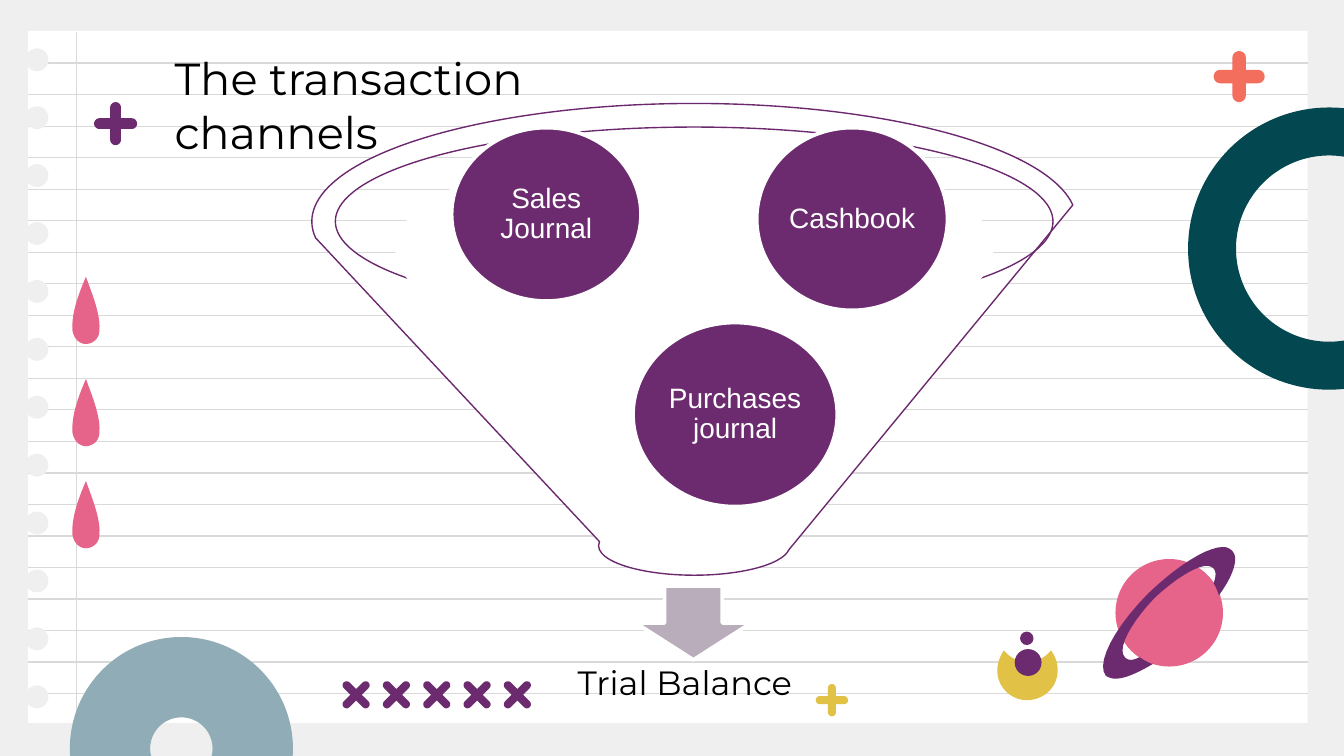
from dataclasses import dataclass
from math import cos, pi, sin

from lxml import etree
from pptx import Presentation
from pptx.dml.color import RGBColor
from pptx.enum.shapes import MSO_CONNECTOR, MSO_SHAPE
from pptx.enum.text import MSO_ANCHOR, PP_ALIGN
from pptx.oxml.ns import qn
from pptx.util import Inches, Pt

RECT, OVAL, DONUT = MSO_SHAPE.RECTANGLE, MSO_SHAPE.OVAL, MSO_SHAPE.DONUT
FUNNEL, DOWN_ARROW = MSO_SHAPE.FUNNEL, MSO_SHAPE.DOWN_ARROW
STRAIGHT = MSO_CONNECTOR.STRAIGHT
TOP, MIDDLE = MSO_ANCHOR.TOP, MSO_ANCHOR.MIDDLE
LEFT, CENTER = PP_ALIGN.LEFT, PP_ALIGN.CENTER

COLORS = {
    "desk": "EFEFEF", "white": "FFFFFF", "black": "000000", "rule": "D9D9D9",
    "teal": "034750", "mist": "90ACB7", "purple": "6C2B6F", "edge": "6B286E",
    "coral": "F36E5D", "yellow": "E1C146", "pink": "E6648A", "arrow": "BAADBB",
}


@dataclass
class Cross:
    x: float
    y: float
    reach: float
    half: float
    color: str
    angle: float = 0


@dataclass
class Journal:
    text: str
    box: tuple[float, float, float, float]


CROSSES = [
    Cross(9.22, 0.57, 0.19, 0.05, "coral"),
    Cross(0.86, 0.92, 0.16, 0.04, "purple"),
    Cross(6.19, 5.21, 0.12, 0.03, "yellow"),
] + [Cross(2.65 + 0.3 * i, 5.17, 0.13, 0.03, "purple", pi / 4) for i in range(5)]

JOURNALS = [
    Journal("Sales Journal", (3.36, 0.95, 1.41, 1.29)),
    Journal("Cashbook", (5.63, 0.95, 1.42, 1.36)),
    Journal("Purchases journal", (4.71, 2.4, 1.52, 1.37)),
]

# Outlines: a start point, then Bezier segments (two controls and an end)
DROP = [(0, 0), (0.05, 0.14, 0.11, 0.28, 0.1, 0.4), (0.1, 0.46, 0.05, 0.5, 0, 0.5),
        (-0.05, 0.5, -0.09, 0.46, -0.1, 0.4), (-0.11, 0.28, -0.06, 0.14, 0, 0)]
CRESCENT = [(7.47, 4.84), (7.44, 4.88, 7.42, 4.94, 7.42, 4.99),
            (7.42, 5.11, 7.52, 5.21, 7.64, 5.21), (7.77, 5.21, 7.87, 5.11, 7.87, 4.99),
            (7.87, 4.93, 7.85, 4.88, 7.82, 4.84), (7.78, 4.89, 7.71, 4.93, 7.64, 4.93),
            (7.58, 4.93, 7.51, 4.89, 7.47, 4.84)]
PLANET_RING = [(9.1, 4.07), (9.13, 4.07, 9.15, 4.08, 9.17, 4.1),
               (9.22, 4.15, 9.18, 4.28, 9.07, 4.43), (9.06, 4.4, 9.05, 4.37, 9.03, 4.34),
               (9.05, 4.29, 9.05, 4.25, 9.03, 4.23), (9.02, 4.22, 9, 4.21, 8.98, 4.21),
               (8.9, 4.21, 8.74, 4.31, 8.59, 4.45), (8.41, 4.64, 8.31, 4.83, 8.37, 4.89),
               (8.38, 4.9, 8.39, 4.91, 8.42, 4.91), (8.43, 4.91, 8.46, 4.9, 8.48, 4.89),
               (8.51, 4.91, 8.54, 4.93, 8.58, 4.94), (8.46, 5.01, 8.37, 5.05, 8.3, 5.05),
               (8.27, 5.05, 8.25, 5.04, 8.23, 5.03), (8.15, 4.94, 8.29, 4.67, 8.55, 4.41),
               (8.76, 4.21, 8.98, 4.07, 9.1, 4.07)]


def rgb(name: str) -> RGBColor:
    return RGBColor.from_string(COLORS[name])


def paint(sp, fill: str, line: str | None = None, width: float = 0.75):
    sp.shadow.inherit = False
    sp.fill.solid()
    sp.fill.fore_color.rgb = rgb(fill)
    if line:
        sp.line.color.rgb = rgb(line)
        sp.line.width = Pt(width)
    else:
        sp.line.fill.background()
    return sp


def add_preset(s, kind, box: tuple, fill: str, line: str | None = None, width: float = 0.75):
    return paint(s.shapes.add_shape(kind, *map(Inches, box)), fill, line, width)


def add_rule(s, x1: float, y1: float, x2: float, y2: float) -> None:
    c = s.shapes.add_connector(STRAIGHT, *map(Inches, (x1, y1, x2, y2)))
    c.line.color.rgb = rgb("rule")
    c.line.width = Pt(0.75)
    etree.SubElement(c._element.spPr, qn("a:effectLst"))


def add_outline(s, points: list, fill: str) -> None:
    pts = [(Inches(x), Inches(y)) for x, y in points]
    fb = s.shapes.build_freeform(*pts[0])
    fb.add_line_segments(pts[1:], close=True)
    paint(fb.convert_to_shape(), fill)


def curve(outline: list, dx: float = 0, dy: float = 0, steps: int = 10) -> list:
    x0, y0 = outline[0]
    points = [(x0 + dx, y0 + dy)]
    for x1, y1, x2, y2, x3, y3 in outline[1:]:
        for i in range(1, steps + 1):
            t = i / steps
            a, b, c, d = (1 - t) ** 3, 3 * t * (1 - t) ** 2, 3 * t * t * (1 - t), t ** 3
            points.append((a * x0 + b * x1 + c * x2 + d * x3 + dx,
                           a * y0 + b * y1 + c * y2 + d * y3 + dy))
        x0, y0 = x3, y3
    return points


def add_cross(s, c: Cross, steps: int = 10) -> None:
    points = []
    for arm in range(4):
        turn = c.angle + arm * pi / 2
        # Round cap, then the inner corner before the next arm
        local = [(c.reach - c.half + c.half * cos(a), c.half * sin(a))
                 for a in (pi * i / steps - pi / 2 for i in range(steps + 1))]
        local.append((c.half, c.half))
        points += [(c.x + u * cos(turn) - v * sin(turn), c.y + u * sin(turn) + v * cos(turn))
                   for u, v in local]
    add_outline(s, points, c.color)


def write(sp, text: str, *, size: float, font: str, color: str, align=LEFT,
          anchor=TOP, inset: float | None = None, spacing: float | None = None) -> None:
    tf = sp.text_frame
    tf.word_wrap = True
    tf.vertical_anchor = anchor
    if inset is not None:
        tf.margin_left = tf.margin_right = tf.margin_top = tf.margin_bottom = Inches(inset)
    p = tf.paragraphs[0]
    p.alignment = align
    if spacing:
        p.line_spacing = spacing
    r = p.add_run()
    r.text = text
    r.font.size, r.font.name = Pt(size), font
    r.font.color.rgb = rgb(color)


def add_label(s, box: tuple, text: str, size: float) -> None:
    write(s.shapes.add_textbox(*map(Inches, box)), text,
          size=size, font="Montserrat", color="black")


def main() -> None:
    prs = Presentation()
    prs.slide_width = Inches(10)
    prs.slide_height = Inches(10 * 9 / 16)
    s = prs.slides.add_slide(prs.slide_layouts[6])
    s.background.fill.solid()
    s.background.fill.fore_color.rgb = rgb("desk")

    # Notebook page: rules, margin and punched holes
    add_preset(s, RECT, (0.21, 0.23, 9.52, 5.15), "white")
    for i in range(21):
        y = 0.47 + i * (5.16 - 0.47) / 20
        add_rule(s, 0.21, y, 9.73, y)
    add_rule(s, 0.57, 0.24, 0.57, 5.39)
    for i in range(12):
        add_preset(s, OVAL, (0.19, 0.36 + i * (5.1 - 0.36) / 11, 0.17, 0.17), "desk")

    # Decorations
    for box, color, ring in (((8.84, 0.8, 2.1, 2.1), "teal", 0.17),
                             ((0.52, 4.74, 1.66, 1.66), "mist", 0.36)):
        add_preset(s, DONUT, box, color).adjustments[0] = ring
    for cross in CROSSES:
        add_cross(s, cross)
    add_outline(s, curve(CRESCENT), "yellow")
    add_preset(s, OVAL, (7.55, 4.83, 0.2, 0.2), "purple")
    add_preset(s, OVAL, (7.59, 4.7, 0.1, 0.1), "purple")
    for i in range(3):
        add_outline(s, curve(DROP, 0.64, 2.06 + 0.76 * i), "pink")
    add_preset(s, OVAL, (8.3, 4.16, 0.8, 0.8), "pink")
    add_outline(s, curve(PLANET_RING), "purple")

    # Funnel, its mouth and the result
    add_preset(s, FUNNEL, (2.32, 0.77, 5.69, 3.51), "white", "edge")
    add_preset(s, DOWN_ARROW, (4.73, 4.36, 0.86, 0.55), "arrow", "white", 2)
    add_label(s, (4.2, 4.88, 2.25, 0.4), "Trial Balance", 18)
    add_preset(s, OVAL, (2.94, 1.08, 4.45, 1.55), "white")

    # Journals
    for j in JOURNALS:
        sp = add_preset(s, OVAL, j.box, "purple", "white", 2)
        write(sp, j.text, size=15, font="Arial", color="white", align=CENTER,
              anchor=MIDDLE, inset=0.02, spacing=0.9)

    # Title
    add_label(s, (1.2, 0.33, 3.82, 0.91), "The transaction channels", 24)
    prs.save("out.pptx")


if __name__ == "__main__":
    main()
